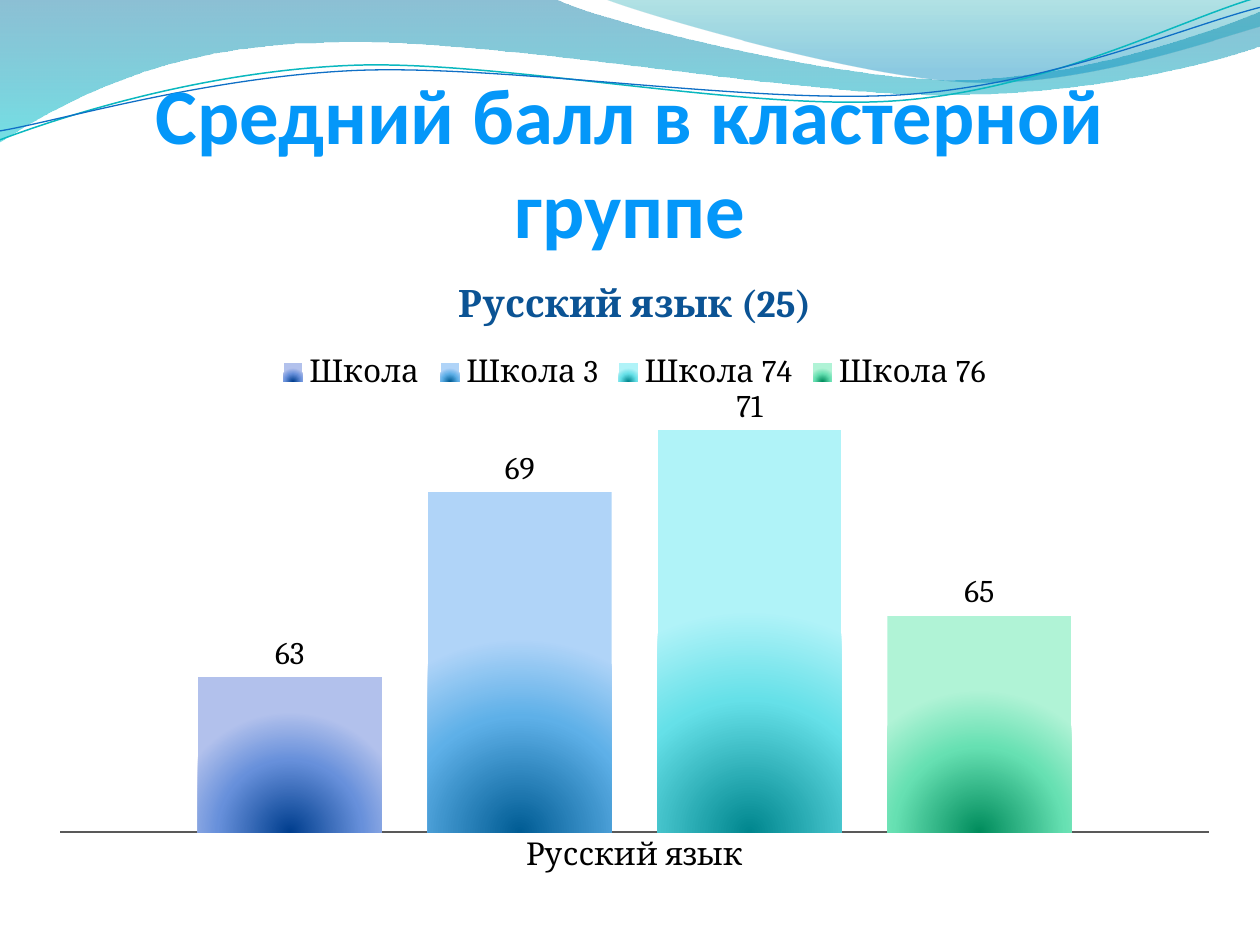
from pptx import Presentation
from pptx.chart.data import CategoryChartData
from pptx.dml.color import RGBColor
from pptx.enum.chart import XL_CHART_TYPE, XL_LABEL_POSITION, XL_LEGEND_POSITION, XL_TICK_MARK
from pptx.enum.text import MSO_ANCHOR, MSO_AUTO_SIZE, PP_ALIGN
from pptx.oxml import parse_xml
from pptx.oxml.ns import nsdecls, qn
from pptx.util import Cm, Pt

COLORS = {
    "title": "0497F9", "chart title": "0B5394", "text": "000000", "axis": "595959",
    "deep": "0074A1", "aqua": "00C6CF", "teal": "00A1A9", "sky": "008BBF",
    "green line": "0AB8BF", "blue line": "0F6FC6",
}

# Each wave: start point, then curves (three points) and straight edges (one point), in cm
BROAD_WAVE = [
    (0, -0.03), [(11.18, -0.03)],
    [(12.09, 0.43), (16.87, 1.6), (19.25, 1.6)],
    [(21.67, 1.6), (24.33, 0.66), (25.4, 0.23)], [(25.43, 0.91)],
    [(24.97, 1.12), (22.1, 1.93), (18.95, 1.91)],
    [(15.8, 1.91), (9.7, 0.71), (6.53, 0.86)],
    [(3.28, 0.89), (1.17, 2.11), (-0.03, 2.87)],
]
RIGHT_WAVE = [
    (12.17, -0.03),
    [(12.93, 0.28), (17.32, 1.57), (19.53, 1.65)],
    [(21.74, 1.75), (24.41, 0.81), (25.4, 0.53)], [(25.4, 0)],
]
GREEN_LINE = [
    (0, 2.82),
    [(1.22, 2.36), (4.01, 1.45), (7.04, 1.32)],
    [(10.03, 1.19), (15.06, 2.26), (18.11, 2.03)],
    [(21.16, 1.8), (23.83, 0.38), (25.35, -0.05)],
]
BLUE_LINE = [
    (0, 2.64),
    [(1.19, 2.44), (4.17, 1.55), (7.19, 1.42)],
    [(10.24, 1.3), (15.16, 2.11), (18.21, 1.91)],
    [(21.23, 1.7), (23.9, 0.53), (25.4, 0.15)],
]

# School, average score, gradient from the foot of the column outwards
SCHOOLS = [
    ("Школа", 63, ("003E8E", "6790DB", "B2C1EC")),
    ("Школа 3", 69, ("005C94", "5EB0E8", "B0D4F8")),
    ("Школа 74", 71, ("00868E", "65E0E8", "B0F3F8")),
    ("Школа 76", 65, ("008C5C", "66E0B2", "B0F3D6")),
]
DOWNWARD = '<a:lin ang="5400000" scaled="0"/>'
FROM_FOOT = '<a:path path="circle"><a:fillToRect l="50000" t="100000" r="50000" b="0"/></a:path>'
PLOT_AREA = {"x": 0.02, "y": 0.23, "w": 0.96, "h": 0.68}


def rgb(name):
    return RGBColor.from_string(COLORS[name])


def apply(target, **values):
    for name, value in values.items():
        setattr(target, name, value)


def set_gradient(fill, properties, stops, direction):
    """Fill with (position, hex colour, opacity) stops, the numbers in percent."""
    fill.solid()
    stop_xml = "".join(
        f'<a:gs pos="{position * 1000}"><a:srgbClr val="{color}">'
        f'<a:alpha val="{opacity * 1000}"/></a:srgbClr></a:gs>'
        for position, color, opacity in stops)
    gradient = parse_xml(f'<a:gradFill {nsdecls("a")} rotWithShape="1">'
                         f'<a:gsLst>{stop_xml}</a:gsLst>{direction}</a:gradFill>')
    properties.replace(properties.find(qn("a:solidFill")), gradient)


def set_plot_layout(chart):
    modes = "".join(f'<c:{side}Mode val="edge"/>' for side in "xy")
    values = "".join(f'<c:{side} val="{share}"/>' for side, share in PLOT_AREA.items())
    layout = parse_xml(f'<c:layout {nsdecls("c")}><c:manualLayout>'
                       f'<c:layoutTarget val="inner"/>{modes}{values}'
                       f'</c:manualLayout></c:layout>')
    plot_area = chart._chartSpace.chart.plotArea
    for automatic in plot_area.findall(qn("c:layout")):
        plot_area.remove(automatic)
    plot_area.insert(0, layout)


class ScoreSlide:
    heading_font = "Calibri"
    chart_font = "Cambria"

    def __init__(self, presentation):
        self.slide = presentation.slides.add_slide(presentation.slide_layouts[5])

    def outline(self, outline, close):
        start, *segments = outline
        builder = self.slide.shapes.build_freeform(*map(Cm, start))
        builder.add_line_segments(
            [(Cm(x), Cm(y)) for segment in segments for x, y in segment], close=close)
        shape = builder.convert_to_shape()
        shape.shadow.inherit = False
        # Join each three edges of a curve into one Bezier segment
        edges = iter(list(shape._element.iter(qn("a:lnTo"))))
        for segment in segments:
            curve, *others = [next(edges) for _ in segment]
            if others:
                curve.tag = qn("a:cubicBezTo")
            for edge in others:
                curve.append(edge[0])
                edge.getparent().remove(edge)
        return shape

    def wave(self, outline, stops):
        wave = self.outline(outline, True)
        wave.line.fill.background()
        set_gradient(wave.fill, wave._element.spPr, stops, DOWNWARD)

    def wave_line(self, outline, color, width):
        curve = self.outline(outline, False)
        curve.fill.background()
        curve.line.color.rgb = rgb(color)
        curve.line.width = Pt(width)

    def title(self, text):
        title = self.slide.shapes.title
        self.slide.shapes._spTree.append(title._element)  # in front of the waves
        apply(title, left=Cm(1.27), top=Cm(1.95), width=Cm(22.86), height=Cm(3.18))
        frame = title.text_frame
        apply(frame, text=text, word_wrap=True, auto_size=MSO_AUTO_SIZE.NONE,
              vertical_anchor=MSO_ANCHOR.BOTTOM, margin_left=0, margin_right=0,
              margin_top=Cm(0.13), margin_bottom=0)
        heading = frame.paragraphs[0]
        heading.alignment = PP_ALIGN.CENTER
        apply(heading.font, name=self.heading_font, size=Pt(45), bold=True)
        heading.font.color.rgb = rgb("title")

    def column_chart(self, heading, category, schools):
        scores = CategoryChartData()
        scores.categories = [category]
        for school, score, _ in schools:
            scores.add_series(school, [score])
        chart = self.slide.shapes.add_chart(
            XL_CHART_TYPE.COLUMN_CLUSTERED, Cm(0.73), Cm(5.1), Cm(24.13), Cm(12.83), scores).chart
        apply(chart.font, name=self.chart_font, size=Pt(18))
        chart.font.color.rgb = rgb("text")
        set_plot_layout(chart)

        # Heading (size and typeface follow the chart) and legend
        chart.has_title = True
        chart.chart_title.include_in_layout = False
        chart.chart_title.text_frame.text = heading
        heading_font = chart.chart_title.text_frame.paragraphs[0].font
        heading_font.bold = True
        heading_font.color.rgb = rgb("chart title")
        chart.has_legend = True
        apply(chart.legend, position=XL_LEGEND_POSITION.TOP, include_in_layout=False)

        # Axes
        apply(chart.value_axis, visible=False, has_major_gridlines=False,
              minimum_scale=58, maximum_scale=72)
        apply(chart.category_axis, major_tick_mark=XL_TICK_MARK.NONE,
              minor_tick_mark=XL_TICK_MARK.NONE)
        chart.category_axis.format.line.color.rgb = rgb("axis")
        chart.category_axis.format.line.width = Pt(0.75)

        # Columns
        columns = chart.plots[0]
        apply(columns, gap_width=150, overlap=-25, vary_by_categories=False, has_data_labels=True)
        apply(columns.data_labels, show_value=True, position=XL_LABEL_POSITION.OUTSIDE_END)
        for series, (_, _, shades) in zip(columns.series, schools):
            fill = series.format.fill
            stops = [(position, shade, 100) for position, shade in zip((0, 60, 100), shades)]
            set_gradient(fill, series._element.find(qn("c:spPr")), stops, FROM_FOOT)


def main():
    presentation = Presentation()
    apply(presentation, slide_width=Cm(25.4), slide_height=Cm(19.05))
    page = ScoreSlide(presentation)

    # Waves along the top edge
    page.wave(BROAD_WAVE, [(0, COLORS["deep"], 45), (100, COLORS["aqua"], 55)])
    page.wave(RIGHT_WAVE, [(0, COLORS["teal"], 30), (80, COLORS["sky"], 45)])
    page.wave_line(GREEN_LINE, "green line", 0.85)
    page.wave_line(BLUE_LINE, "blue line", 0.75)

    # Content
    page.title("Средний балл в кластерной группе")
    page.column_chart("Русский язык (25)", "Русский язык", SCHOOLS)
    presentation.save("out.pptx")


if __name__ == "__main__":
    main()
